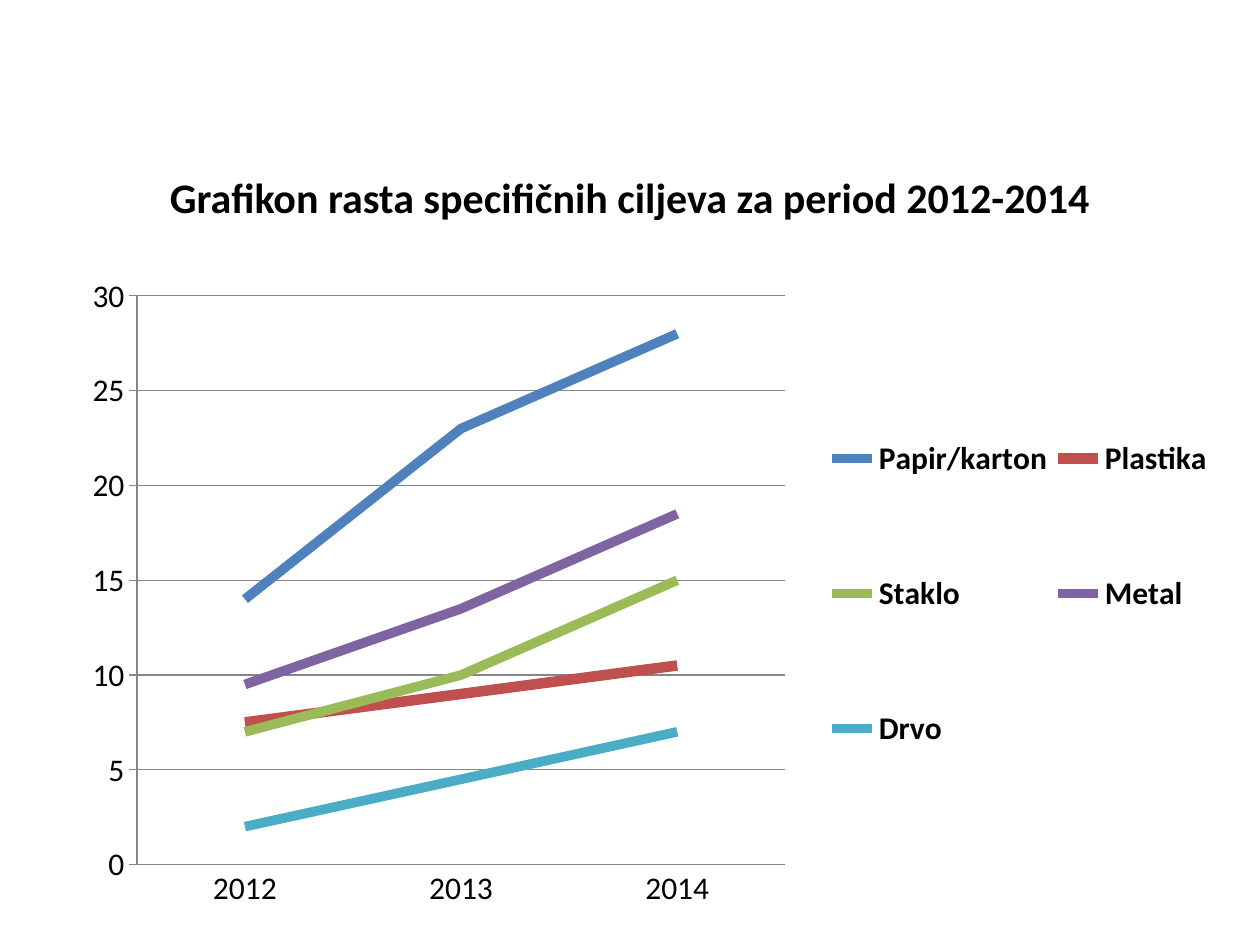
from dataclasses import dataclass

from lxml.etree import SubElement
from pptx import Presentation
from pptx.chart.chart import Chart
from pptx.chart.data import CategoryChartData
from pptx.dml.color import RGBColor
from pptx.enum.chart import XL_CHART_TYPE, XL_LEGEND_POSITION, XL_TICK_MARK
from pptx.enum.text import MSO_ANCHOR, PP_ALIGN
from pptx.oxml.ns import qn
from pptx.slide import Slide
from pptx.util import Cm, Pt

FONT = "Calibri"
COLORS = {
    "text": "000000",
    "grid": "868686",
    "paper": "4F81BD",
    "plastic": "C0504D",
    "glass": "9BBB59",
    "metal": "8064A2",
    "wood": "4BACC6",
}
YEARS = ["2012", "2013", "2014"]


@dataclass
class Material:
    name: str
    values: tuple[float, ...]
    color: str
    width: float = 5.5


MATERIALS = [
    Material("Papir/karton", (14, 23, 28), "paper"),
    Material("Plastika", (7.5, 9, 10.5), "plastic", 6),
    Material("Staklo", (7, 10, 15), "glass"),
    Material("Metal", (9.5, 13.5, 18.5), "metal"),
    Material("Drvo", (2, 4.5, 7), "wood"),
]


def color(name: str) -> RGBColor:
    return RGBColor.from_string(COLORS[name])


def style_font(font, size: float, bold: bool) -> None:
    font.name = FONT
    font.size = Pt(size)
    font.bold = bold
    font.color.rgb = color("text")


def add_title(page: Slide, text: str) -> None:
    box = page.shapes.add_textbox(Cm(1.27), Cm(2.97), Cm(22.86), Cm(1.98))
    frame = box.text_frame
    frame.word_wrap = True
    frame.vertical_anchor = MSO_ANCHOR.MIDDLE
    frame.text = text
    paragraph = frame.paragraphs[0]
    paragraph.alignment = PP_ALIGN.CENTER
    style_font(paragraph.runs[0].font, 24, True)


def set_layout(parent, x: float, y: float, w: float, h: float, inner: bool = False):
    """Place a chart part by fractions of the chart area."""
    layout = parent.find(qn("c:layout"))
    if layout is None:
        layout = SubElement(parent, qn("c:layout"))
    manual = SubElement(layout, qn("c:manualLayout"))
    entries = [("layoutTarget", "inner")] if inner else []
    entries += [("xMode", "edge"), ("yMode", "edge"),
                ("x", x), ("y", y), ("w", w), ("h", h)]
    for tag, value in entries:
        SubElement(manual, qn(f"c:{tag}")).set("val", str(value))
    return layout


def style_axes(chart: Chart) -> None:
    value_axis, category_axis = chart.value_axis, chart.category_axis
    value_axis.minimum_scale = 0
    value_axis.maximum_scale = 30
    value_axis.major_unit = 5
    value_axis.major_tick_mark = XL_TICK_MARK.CROSS
    value_axis.has_major_gridlines = True
    category_axis.major_tick_mark = XL_TICK_MARK.NONE
    for line in (value_axis.format.line, category_axis.format.line,
                 value_axis.major_gridlines.format.line):
        line.color.rgb = color("grid")
        line.width = Pt(0.75)


def add_growth_chart(page: Slide) -> None:
    data = CategoryChartData()
    data.categories = YEARS
    for material in MATERIALS:
        data.add_series(material.name, material.values)
    chart = page.shapes.add_chart(
        XL_CHART_TYPE.LINE, Cm(0.58), Cm(5.56), Cm(24.21), Cm(13.49), data
    ).chart
    chart.has_title = False
    style_font(chart.font, 18, False)
    style_axes(chart)

    # Lines
    plot = chart.plots[0]
    plot.vary_by_categories = False
    for series, material in zip(plot.series, MATERIALS):
        series.smooth = False
        series.format.line.color.rgb = color(material.color)
        series.format.line.width = Pt(material.width)

    # Legend in two columns beside the plot
    chart.has_legend = True
    legend = chart.legend
    legend.position = XL_LEGEND_POSITION.RIGHT
    legend.include_in_layout = False
    style_font(legend.font, 18, True)
    element = legend.font._element if hasattr(legend.font, "_element") else None
    element = chart._chartSpace.find(".//" + qn("c:legend"))
    layout = set_layout(element, 0.66, 0.1, 0.33, 0.75)
    element.find(qn("c:legendPos")).addnext(layout)

    # Plot area
    plot_area = chart._chartSpace.find(".//" + qn("c:plotArea"))
    layout = set_layout(plot_area, 0.09, 0.03, 0.54, 0.85, inner=True)
    plot_area.insert(0, layout)


def main() -> None:
    deck = Presentation()
    deck.slide_width, deck.slide_height = Cm(25.4), Cm(19.05)
    page = deck.slides.add_slide(deck.slide_layouts[6])
    add_title(page, "Grafikon rasta specifičnih ciljeva za period 2012-2014")
    add_growth_chart(page)
    deck.save("out.pptx")


if __name__ == "__main__":
    main()
